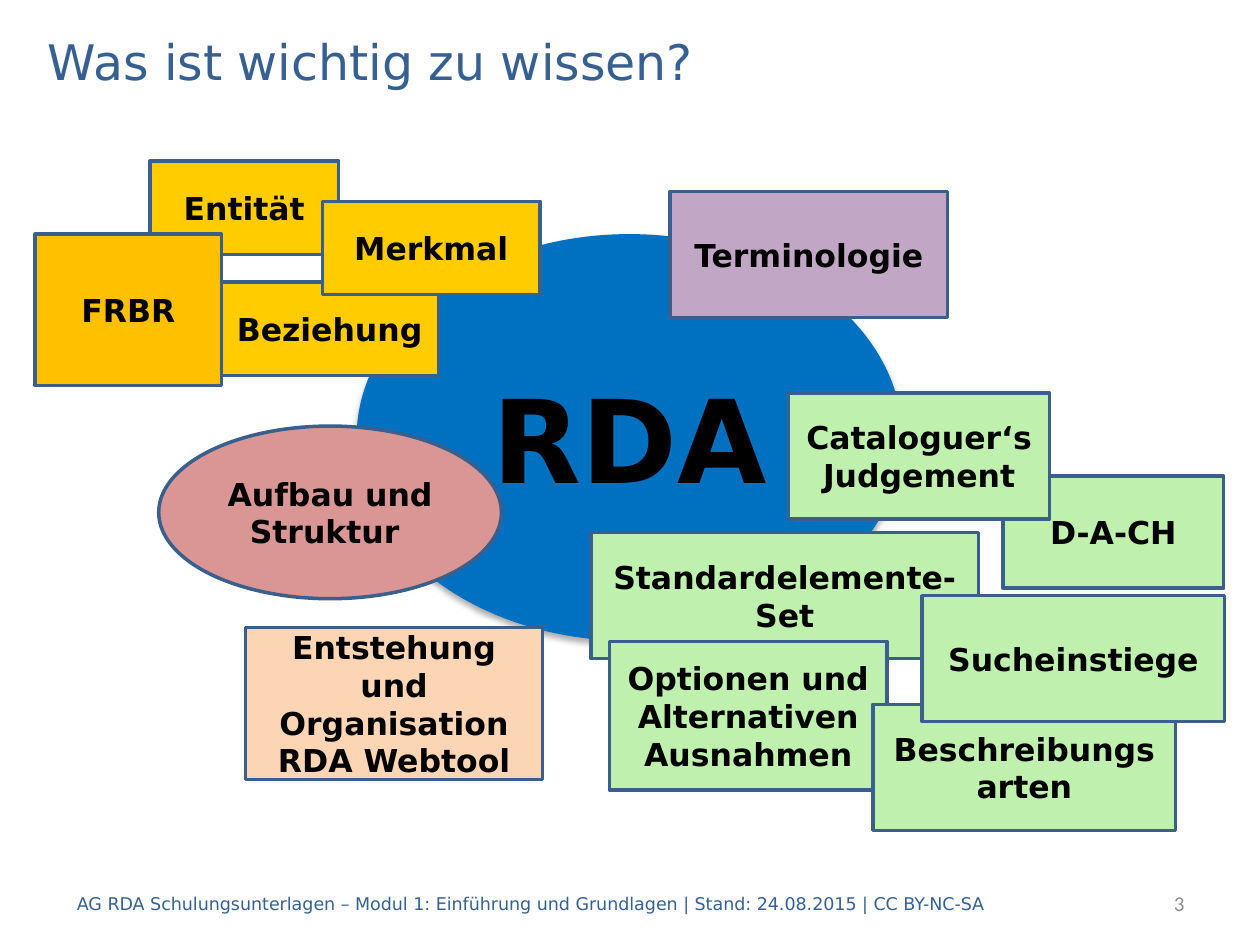
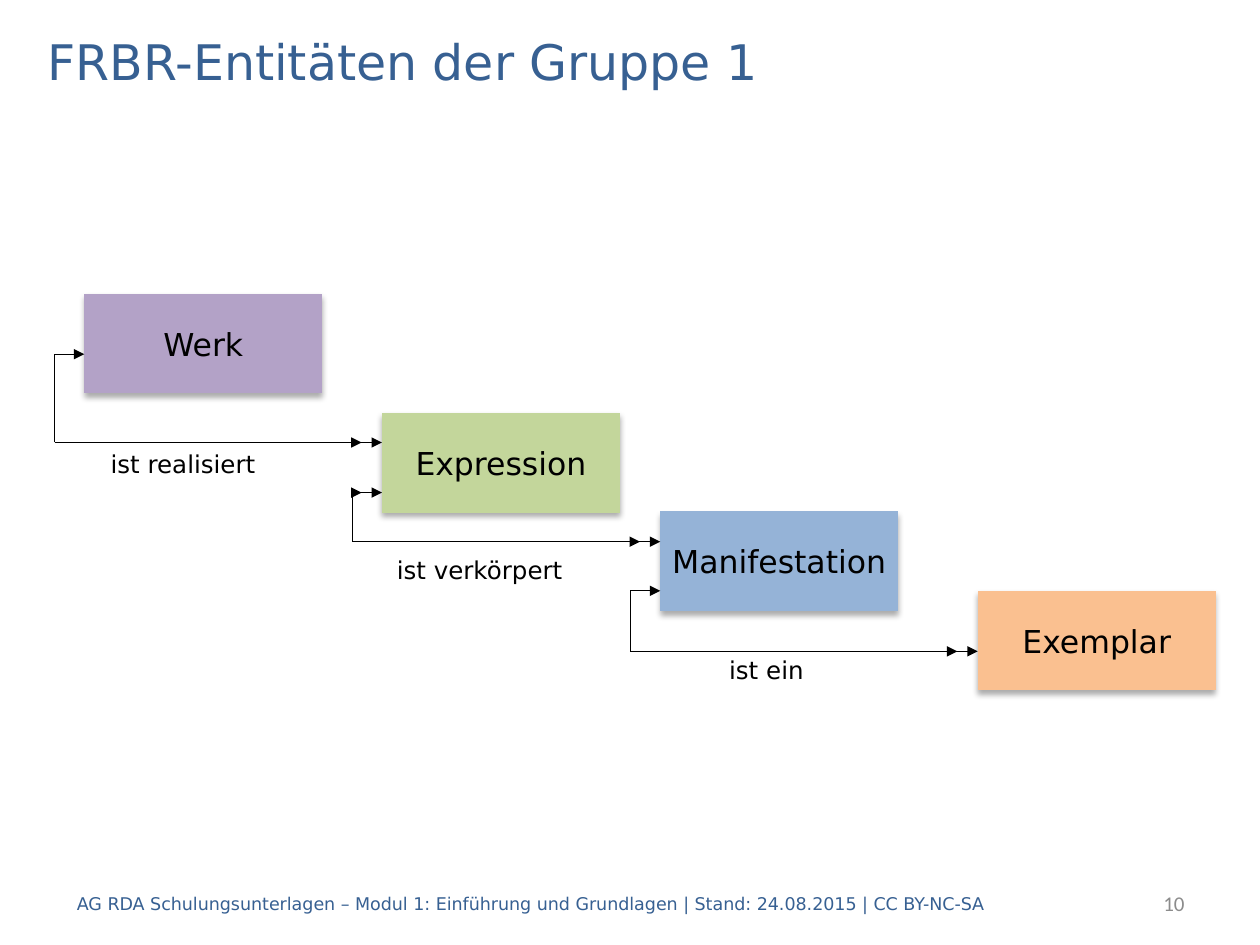
from lxml import etree
from pptx import Presentation
from pptx import util as u
from pptx.dml.color import RGBColor
from pptx.enum import shapes, text
from pptx.oxml import ns

COLORS = {
    "title": "376092", "number": "8C8C8C", "black": "000000", "outline": "3A5F8C",
    "blue": "0070C0", "mauve": "C1A7C5", "rose": "D99694", "yellow": "FFCC00",
    "amber": "FFC000", "mint": "BFF0AE", "peach": "FCD5B5",
    "work": "B3A2C7", "expression": "C3D69B", "manifestation": "95B3D7", "item": "FAC090",
}
FONT = "DejaVu Sans"
FOOTER = ("AG RDA Schulungsunterlagen – Modul 1: Einführung und Grundlagen"
          " | Stand: 24.08.2015 | CC BY-NC-SA")
FOOTER_TOP, FOOTER_HEIGHT, NUMBER_RIGHT = 17.7, 1.02, 24.13

RECTANGLE = shapes.MSO_SHAPE.RECTANGLE
ELLIPSE = shapes.MSO_SHAPE.OVAL
PROCESS = shapes.MSO_SHAPE.FLOWCHART_PROCESS
LEFT, CENTER, RIGHT = text.PP_ALIGN.LEFT, text.PP_ALIGN.CENTER, text.PP_ALIGN.RIGHT
MIDDLE, TOP = text.MSO_ANCHOR.MIDDLE, text.MSO_ANCHOR.TOP

# Topics around RDA, back to front: text, fill, left, top, width, height in cm
TOPICS = [
    ("Terminologie", "mauve", 13.51, 3.86, 5.59, 2.54),
    ("Aufbau und Struktur ", "rose", 3.2, 8.59, 6.91, 3.48),
    ("Entität", "yellow", 3.02, 3.25, 3.81, 1.88),
    ("Beziehung", "yellow", 4.45, 5.69, 4.39, 1.88),
    ("Merkmal", "yellow", 6.5, 4.06, 4.39, 1.88),
    ("Standardelemente-Set", "mint", 11.91, 10.74, 7.82, 2.54),
    ("Entstehung und Organisation\nRDA Webtool", "peach", 4.95, 12.65, 5.99, 3.07),
    ("Optionen und Alternativen\nAusnahmen", "mint", 12.29, 12.93, 5.59, 3),
    ("Beschreibungsarten", "mint", 17.6, 14.2, 6.1, 2.54),
    ("Sucheinstiege", "mint", 18.59, 12.01, 6.1, 2.54),
    ("FRBR", "amber", 0.71, 4.72, 3.76, 3.05),
    ("D-A-CH", "mint", 20.22, 9.6, 4.45, 2.26),
    ("Cataloguer‘s Judgement", "mint", 15.9, 7.92, 5.26, 2.54),
]

# Entities of group 1: text, fill, left, top
ENTITY_WIDTH, ENTITY_HEIGHT = 4.8, 2.01
ENTITIES = [
    ("Werk", "work", 1.7, 5.92),
    ("Expression", "expression", 7.7, 8.33),
    ("Manifestation", "manifestation", 13.31, 10.31),
    ("Exemplar", "item", 19.71, 11.91),
]
# Relations between neighbouring entities: height of upper and lower arrow
RELATIONS = [(7.14, 8.92), (9.93, 10.92), (11.91, 13.13)]
LANE_GAP = 0.6
# Short arrows on the relation lines: start, end, height
INNER_ARROWS = [(1.1, 7.29, 8.92), (7.1, 7.29, 9.93), (7.1, 12.9, 10.92), (13.5, 19.3, 13.13)]
# Relation names: text, left, top, width
LABELS = [
    ("ist realisiert", 1.98, 8.92, 3.43),
    ("ist verkörpert", 7.75, 11.07, 3.89),
    ("ist ein", 14.45, 13.08, 2.01),
]


def color(name):
    return RGBColor.from_string(COLORS[name])


def cm(*lengths):
    return [u.Cm(length) for length in lengths]


def write(shape, words, size, tint="black", bold=False, align=CENTER, anchor=MIDDLE,
          font=FONT, wrap=True):
    frame = shape.text_frame
    frame.text = words
    frame.word_wrap = wrap
    frame.vertical_anchor = anchor
    for paragraph in frame.paragraphs:
        paragraph.alignment = align
        for run in paragraph.runs:
            run.font.name = font
            run.font.size = u.Pt(size)
            run.font.bold = bold
            run.font.color.rgb = color(tint)


def add_text(slide, words, left, top, width, height, size, **style):
    box = slide.shapes.add_textbox(*cm(left, top, width, height))
    write(box, words, size, **{"align": LEFT, **style})


def add_shadow(shape):
    effects = shape._element.spPr.find(ns.qn("a:effectLst"))
    shadow = etree.SubElement(effects, ns.qn("a:outerShdw"), blurRad=str(u.Pt(3.5)),
                              dist=str(u.Pt(2.2)), dir="5400000", rotWithShape="0")
    tint = etree.SubElement(shadow, ns.qn("a:srgbClr"), val=COLORS["black"])
    etree.SubElement(tint, ns.qn("a:alpha"), val="32000")


def add_box(slide, kind, fill, left, top, width, height, outlined=False):
    """Outlined boxes are flat, the others cast a soft shadow."""
    shape = slide.shapes.add_shape(kind, *cm(left, top, width, height))
    shape.shadow.inherit = False
    shape.fill.solid()
    shape.fill.fore_color.rgb = color(fill)
    if outlined:
        shape.line.color.rgb = color("outline")
        shape.line.width = u.Pt(2)
    else:
        shape.line.fill.background()
        add_shadow(shape)
    return shape


def add_line(slide, x1, y1, x2, y2, arrow=True):
    line = slide.shapes.add_connector(shapes.MSO_CONNECTOR.STRAIGHT, *cm(x1, y1, x2, y2))
    line.line.color.rgb = color("black")
    line.line.width = u.Pt(0.75)
    if arrow:
        etree.SubElement(line.line._get_or_add_ln(), ns.qn("a:tailEnd"), type="triangle")
    etree.SubElement(line._element.spPr, ns.qn("a:effectLst"))


def add_slide(presentation, heading, number, footer_width, number_width):
    slide = presentation.slides.add_slide(presentation.slide_layouts[5])
    title = slide.shapes.title
    title.left, title.top, title.width, title.height = cm(0.71, 0.51, 24, 1.42)
    write(title, heading, 28, "title", align=LEFT)
    title.text_frame.auto_size = text.MSO_AUTO_SIZE.NONE
    # Footer and slide number
    add_text(slide, FOOTER, 1.3, FOOTER_TOP, footer_width, FOOTER_HEIGHT, 10, tint="title")
    add_text(slide, number, NUMBER_RIGHT - number_width, FOOTER_TOP, number_width,
             FOOTER_HEIGHT, 12, tint="number", align=RIGHT, font="Calibri")
    return slide


def build_topics(presentation):
    slide = add_slide(presentation, "Was ist wichtig zu wissen?", "3", 21.01, 1.42)
    core = add_box(slide, ELLIPSE, "blue", 7.19, 4.72, 11, 8.2)
    write(core, "RDA", 66, bold=True)
    for words, fill, *place in TOPICS:
        kind = ELLIPSE if fill == "rose" else RECTANGLE
        topic = add_box(slide, kind, fill, *place, outlined=True)
        write(topic, words, 18, bold=True)


def build_entities(presentation):
    slide = add_slide(presentation, "FRBR-Entitäten der Gruppe 1", "10", 20.6, 2.03)
    for words, fill, left, top in ENTITIES:
        entity = add_box(slide, PROCESS, fill, left, top, ENTITY_WIDTH, ENTITY_HEIGHT)
        write(entity, words, 18, wrap=False)

    # Each relation runs in a lane left of its upper entity
    for upper, lower, (y_upper, y_lower) in zip(ENTITIES, ENTITIES[1:], RELATIONS):
        upper_left, lower_left = upper[2], lower[2]
        lane = upper_left - LANE_GAP
        add_line(slide, lane, y_lower, lower_left, y_lower)
        add_line(slide, lane, y_upper, lane, y_lower, arrow=False)
        add_line(slide, lane, y_upper, upper_left, y_upper)
    for start, end, y in INNER_ARROWS:
        add_line(slide, start, y, end, y)

    for words, left, top, width in LABELS:
        add_text(slide, words, left, top, width, 0.84, 14, anchor=TOP, wrap=False)


def main():
    presentation = Presentation()
    presentation.slide_width, presentation.slide_height = cm(25.4, 19.05)
    build_topics(presentation)
    build_entities(presentation)
    presentation.save("out.pptx")


if __name__ == "__main__":
    main()
